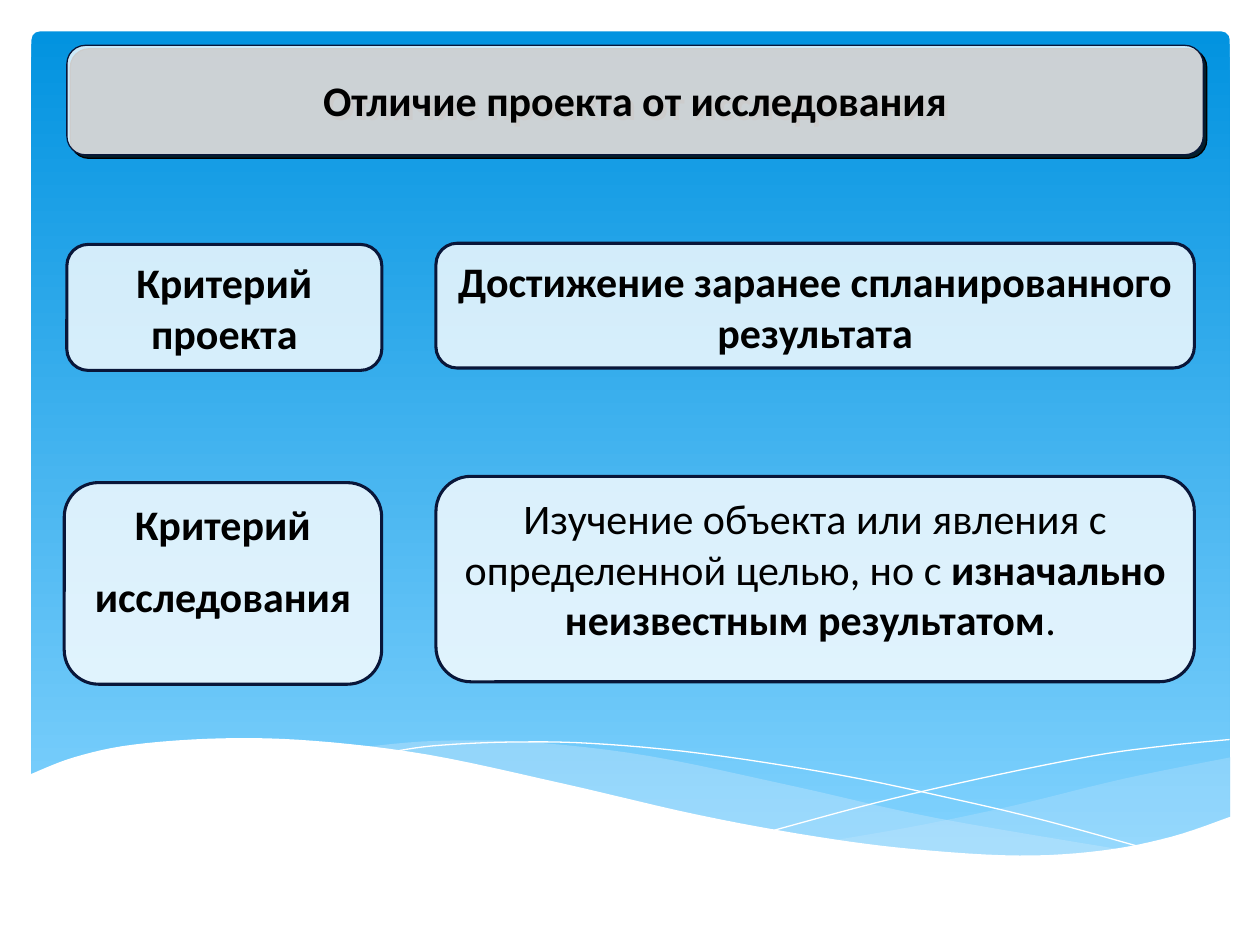
"""Build a slide contrasting the criteria of a project and of a study."""
import pptx
import pptx.dml.color
import pptx.enum.shapes
import pptx.enum.text
import pptx.oxml.ns
import pptx.util
from lxml import etree

Pt = pptx.util.Pt
RGB = pptx.dml.color.RGBColor
ANCHOR = pptx.enum.text.MSO_ANCHOR
ROUNDED = pptx.enum.shapes.MSO_SHAPE.ROUNDED_RECTANGLE
qn = pptx.oxml.ns.qn

WHITE, BLACK = RGB(255, 255, 255), RGB(0, 0, 0)
NAVY, MIST = RGB(0x09, 0x16, 0x39), RGB(0xC6, 0xE7, 0xFC)
SKY_TOP, SKY_BOTTOM = RGB(0x02, 0x93, 0xE0), RGB(0x83, 0xD3, 0xFE)

SKY = (18, 18, 684.7, 475.2)
RIPPLES = [
    (29, [
        [(703.4, 432.7), (642.2, 445), (580.3, 460.1), (525.6, 471.6), (476.6, 480.2)],
        [(476.6, 480.2), (527.8, 486.7), (578.9, 489.6), (628.6, 486.7),
         (668.9, 478.8), (703.4, 467.3)],
    ]),
    (40, [
        [(206.6, 427), (248.4, 423.4), (302.4, 424.1), (370.8, 432), (453.6, 449.3),
         (534.2, 467.3), (643.7, 486)],
        [(643.7, 486), (596.9, 489.6), (530.6, 487.4), (457.2, 477.4), (381.6, 462.2),
         (324, 449.3), (261.4, 434.9), (206.6, 427)],
    ]),
]
THREADS = [
    [(223.2, 429.8), (247.7, 426.2), (289.4, 424.1), (337.7, 424.8), (401, 430.6),
     (479.5, 442.8), (547.9, 457.2), (599, 469.4), (653.8, 484.6)],
    [(442.1, 474.5), (501.1, 458.6), (559.4, 445), (624.2, 432), (666, 426.2),
     (702.7, 422.6)],
]
SHORE = [(16.6, 442.8), (42.5, 432.7), (76.3, 425.5), (127.4, 421.9), (180, 423.4),
         (244.8, 431.3), (321.8, 447.8), (399.6, 465.8), (466.6, 478.1), (522.7, 485.3),
         (582.5, 488.9), (630, 486), (669.6, 478.1), (703.4, 466.6)]
SHORE_BASE = [(703.4, 526.3), (16.6, 526.3)]

CARDS = [
    {"box": (249.1, 139, 433.4, 71.3),
     "text": [[("Достижение заранее спланированного результата", True)]]},
    {"box": (36.7, 275.8, 181.4, 115.2), "before": 12,
     "text": [[("Критерий", True)], [("исследования", True)]]},
    {"box": (249.1, 272.2, 433.4, 117.4),
     "text": [[("Изучение объекта или явления с определенной целью, но с ", False),
               ("изначально неизвестным результатом", True), (". ", False)]]},
    {"box": (38.2, 25.9, 649.4, 62.6), "outline": 0.75, "raised": True,
     "frame": {"vertical_anchor": ANCHOR.MIDDLE, "word_wrap": False},
     "text": [[("Отличие проекта от исследования", True)]]},
    {"box": (38.2, 139.7, 180, 72),
     "text": [[("Критерий", True)], [("проекта", True)]]},
]
CARD_FRAME = {"vertical_anchor": ANCHOR.TOP, "word_wrap": True}
CARD_FONT = {"name": "Calibri", "size": Pt(24)}


def apply(target, values):
    for name, value in values.items():
        setattr(target, name, value)


def paint(shape, color, opacity=100):
    shape.fill.solid()
    shape.fill.fore_color.rgb = color
    if opacity < 100:
        tint = shape.fill._xPr.find(qn("a:solidFill"))[0]
        etree.SubElement(tint, qn("a:alpha"), val=str(opacity * 1000))


def raise_up(shape):
    effects = shape._element.spPr.find(qn("a:effectLst"))
    shadow = etree.SubElement(effects, qn("a:outerShdw"), dist=str(Pt(2.8)),
                              dir="2700000", algn="ctr", rotWithShape="0")
    etree.SubElement(shadow, qn("a:srgbClr"), val=str(BLACK))


def curve(knots, steps=6):
    """Sample a Catmull-Rom spline through the knots."""
    padded = [knots[0], *knots, knots[-1]]
    points = [knots[0]]
    for a, b, c, d in zip(padded, padded[1:], padded[2:], padded[3:]):
        for t in (step / steps for step in range(1, steps + 1)):
            points.append(tuple(
                q + t * (r - p) / 2 + t ** 2 * (2 * p - 5 * q + 4 * r - s) / 2
                + t ** 3 * (3 * q - p - 3 * r + s) / 2
                for p, q, r, s in zip(a, b, c, d)))
    return points


def add_wave(slide, points, close=True):
    start, *rest = [(Pt(x), Pt(y)) for x, y in points]
    builder = slide.shapes.build_freeform(*start)
    builder.add_line_segments(rest, close=close)
    wave = builder.convert_to_shape()
    wave.shadow.inherit = False
    wave.line.fill.background()
    return wave


def add_rounded(slide, box, rounding):
    shape = slide.shapes.add_shape(ROUNDED, *map(Pt, box))
    shape.adjustments[0] = rounding
    shape.shadow.inherit = False
    return shape


def add_background(slide):
    sky = add_rounded(slide, SKY, 0.01)
    sky.line.fill.background()
    sky.fill.gradient()
    sky.fill.gradient_angle = 270
    for stop, color, position in zip(sky.fill.gradient_stops, (SKY_TOP, SKY_BOTTOM), (0, 1)):
        stop.color.rgb = color
        stop.position = position
    for opacity, edges in RIPPLES:
        paint(add_wave(slide, [point for edge in edges for point in curve(edge)]), MIST, opacity)
    for knots in THREADS:
        thread = add_wave(slide, curve(knots), close=False)
        thread.fill.background()
        thread.line.color.rgb = WHITE
        thread.line.width = Pt(0)
    paint(add_wave(slide, curve(SHORE) + SHORE_BASE), WHITE)


def add_card(slide, card):
    shape = add_rounded(slide, card["box"], 0.17)
    paint(shape, WHITE, 80)
    shape.line.color.rgb = NAVY
    shape.line.width = Pt(card.get("outline", 1.75))
    if card.get("raised"):
        raise_up(shape)
    frame = shape.text_frame
    apply(frame, {**CARD_FRAME, **card.get("frame", {})})
    for index, pieces in enumerate(card["text"]):
        paragraph = frame.add_paragraph() if index else frame.paragraphs[0]
        apply(paragraph, {"alignment": pptx.enum.text.PP_ALIGN.CENTER,
                          "space_before": Pt(card.get("before", 0))})
        for words, bold in pieces:
            run = paragraph.add_run()
            run.text = words
            apply(run.font, {**CARD_FONT, "bold": bold})
            run.font.color.rgb = BLACK


def main():
    deck = pptx.Presentation()
    apply(deck, {"slide_width": Pt(720), "slide_height": Pt(540)})
    slide = deck.slides.add_slide(deck.slide_layouts[6])
    add_background(slide)
    for card in CARDS:
        add_card(slide, card)
    deck.save("out.pptx")


if __name__ == "__main__":
    main()
